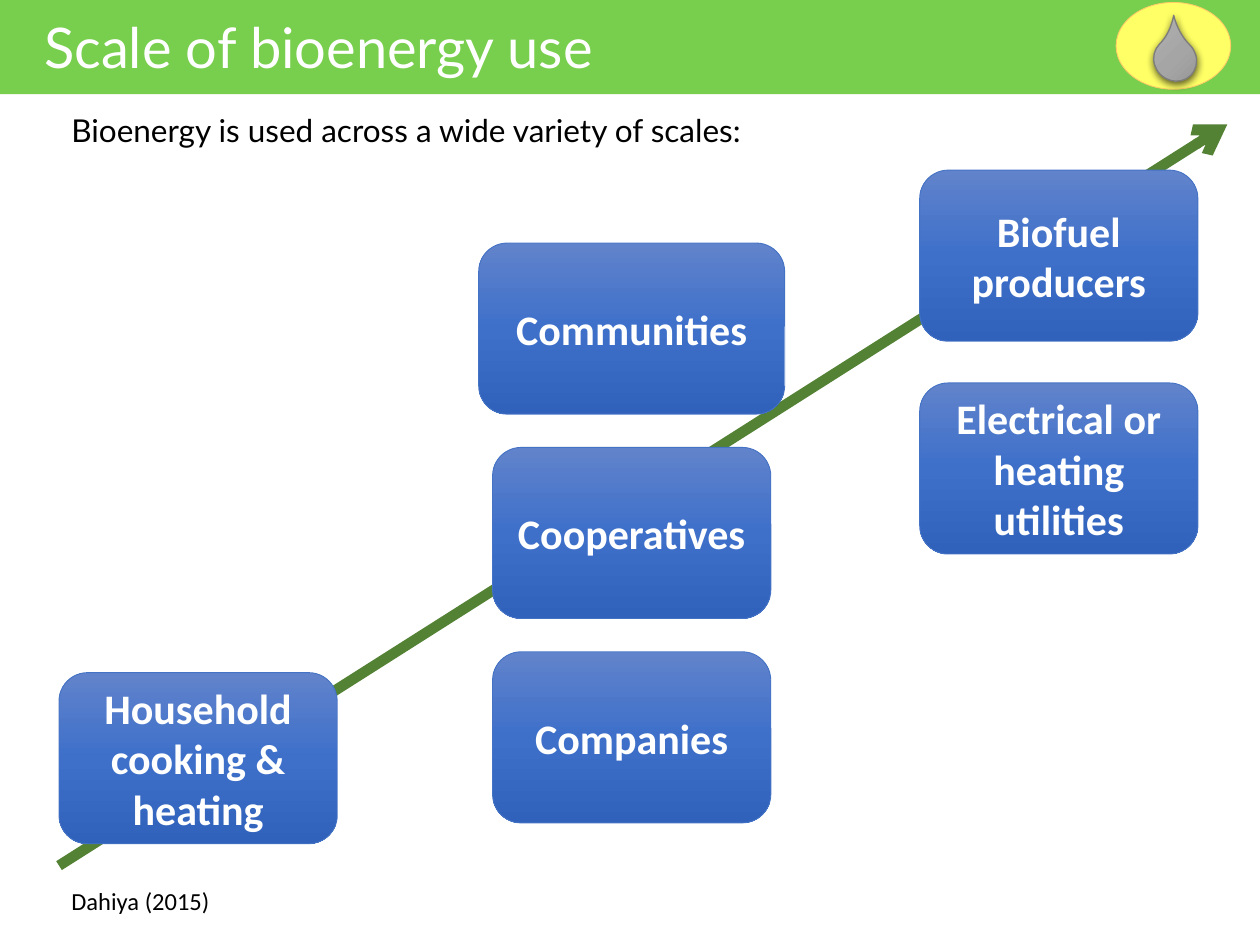
"""Build the slide on the scale of bioenergy use."""
from copy import deepcopy
from lxml.etree import SubElement
from pptx import Presentation
from pptx.dml.color import RGBColor
from pptx.enum.shapes import MSO_CONNECTOR, MSO_SHAPE
from pptx.enum.text import MSO_ANCHOR, MSO_AUTO_SIZE, PP_ALIGN
from pptx.oxml.ns import qn
from pptx.util import Cm, Pt


def hue(code):
    return RGBColor.from_string(code)


def shade(shape, codes, edge, width):
    shape.shadow.inherit = False
    shape.fill.gradient()
    shape.fill.gradient_angle = 270
    stops = shape.fill._fill._gradFill.find(qn("a:gsLst"))
    stops.insert(1, deepcopy(stops[0]))
    for stop, code, place in zip(shape.fill.gradient_stops, codes, (0, 0.5, 1)):
        stop.color.rgb = hue(code)
        stop.position = place
    shape.line.color.rgb = hue(edge)
    shape.line.width = Pt(width)


deck = Presentation()
deck.slide_width, deck.slide_height = Cm(25.4), Cm(19.05)
slide = deck.slides.add_slide(deck.slide_layouts[6])
shapes = slide.shapes

arrow = shapes.add_connector(
    MSO_CONNECTOR.STRAIGHT, Cm(1.19), Cm(17.45), Cm(24.74), Cm(2.51))
arrow.line.color.rgb = hue("548235")
arrow.line.width = Pt(6)
SubElement(arrow.line._get_or_add_ln(), qn("a:tailEnd"), type="arrow")
SubElement(arrow._element.spPr, qn("a:effectLst"))

band = shapes.add_shape(MSO_SHAPE.RECTANGLE, 0, 0, Cm(25.43), Cm(1.9))
band.shadow.inherit = False
band.fill.solid()
band.fill.fore_color.rgb = hue("78CE4D")
band.line.fill.background()

texts = [
    ("Scale of bioenergy use", 0.64, 0.13, 12.6, 1.63, "Lato", 32, "FFFFFF", False),
    ("Bioenergy is used across a wide variety of scales:",
     1.19, 1.96, 23.55, 1.14, "Lato", 18, "000000", True),
    ("Dahiya (2015)", 1.19, 17.73, 3.33, 0.86, "Calibri", 14, "000000", False),
]
for words, left, top, width, height, face, size, code, wrap in texts:
    box = shapes.add_textbox(Cm(left), Cm(top), Cm(width), Cm(height))
    frame = box.text_frame
    frame.word_wrap = wrap
    frame.auto_size = MSO_AUTO_SIZE.SHAPE_TO_FIT_TEXT
    para = frame.paragraphs[0]
    para.text = words
    para.font.name, para.font.size = face, Pt(size)
    para.font.color.rgb = hue(code)
    if wrap:
        para.line_spacing = 1.2
        props = para._p.get_or_add_pPr()
        props.set("marL", str(Cm(0.64)))
        props.set("indent", str(-Cm(0.64)))

wide, tall = 5.61, 3.45
mid, first, step = 9.93, 4.9, 4.12
users = [
    ("Household cooking &\vheating", 1.19, 13.56, wide),
    ("Biofuel producers", 18.54, 3.43, wide),
    ("Electrical or heating utilities", 18.54, 7.72, wide),
    ("Companies", mid, first + 2 * step, wide),
    ("Cooperatives", mid, first + step, wide),
    ("Communities", mid - 0.28, first, wide + 0.56),
]
for words, left, top, width in users:
    card = shapes.add_shape(
        MSO_SHAPE.ROUNDED_RECTANGLE, Cm(left), Cm(top), Cm(width), Cm(tall))
    shade(card, ("6183CB", "3E70CA", "3062BB"), "4472C4", 0.5)
    frame = card.text_frame
    frame.word_wrap = True
    frame.vertical_anchor = MSO_ANCHOR.MIDDLE
    para = frame.paragraphs[0]
    para.text = words
    para.alignment = PP_ALIGN.CENTER
    para.font.name, para.font.size, para.font.bold = "Calibri", Pt(24), True
    para.font.color.rgb = hue("FFFFFF")

badge = shapes.add_group_shape().shapes
disc = badge.add_shape(MSO_SHAPE.OVAL, Cm(22.5), Cm(0.05), Cm(2.31), Cm(1.75))
disc.shadow.inherit = False
disc.fill.solid()
disc.fill.fore_color.rgb = hue("FFFF66")
disc.line.color.rgb = hue("FFCC66")
disc.line.width = Pt(0.5)

drop = badge.add_shape(MSO_SHAPE.TEAR, Cm(23.27), Cm(0.76), Cm(0.84), Cm(0.89))
drop.rotation = 314.8
drop.adjustments[0] = 1.465
shade(drop, ("AFAFAF", "A5A5A5", "939393"), "7C7C7C", 0.75)
glow = SubElement(
    drop._element.spPr.find(qn("a:effectLst")), qn("a:outerShdw"),
    blurRad=str(Pt(4.5)), dist=str(Pt(1.5)), dir="5400000", rotWithShape="0")
ink = SubElement(glow, qn("a:srgbClr"), val="000000")
SubElement(ink, qn("a:alpha"), val="63000")

deck.save("out.pptx")
